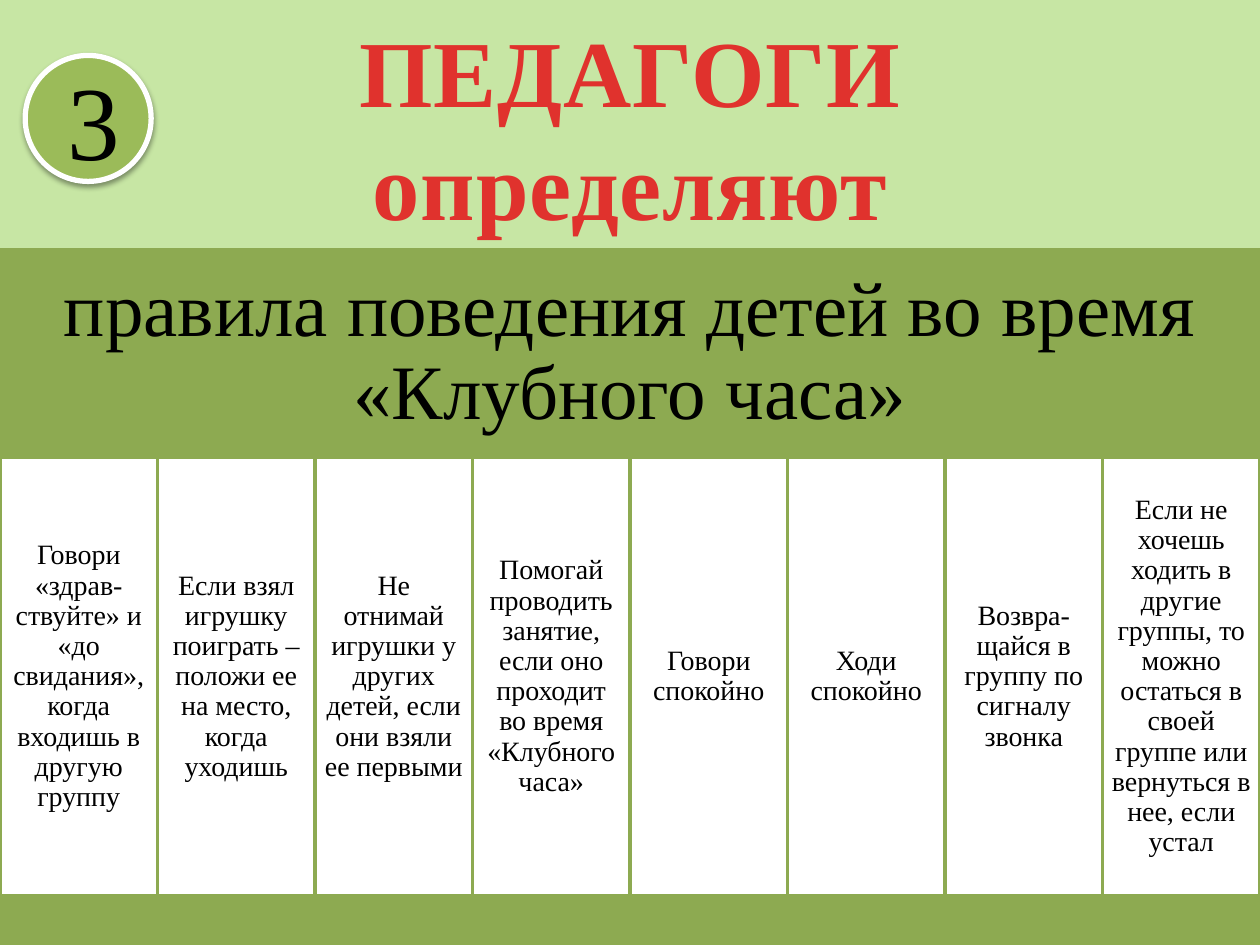
from lxml import etree
from pptx import Presentation, util as u
from pptx.dml.color import RGBColor
from pptx.enum import shapes, text
from pptx.oxml import ns

BACKGROUND = RGBColor(0xC7, 0xE6, 0xA4)
RED = RGBColor(0xE0, 0x32, 0x2D)
OLIVE = RGBColor(0x8D, 0xAA, 0x51)
GREEN = RGBColor(0x9B, 0xBB, 0x59)
WHITE = RGBColor(0xFF, 0xFF, 0xFF)
BLACK = RGBColor(0, 0, 0)

RULES = [
    "Говори «здрав-ствуйте» и «до свидания», когда входишь в другую группу",
    "Если взял игрушку поиграть – положи ее на место, когда уходишь",
    "Не отнимай игрушки у других детей, если они взяли ее первыми",
    "Помогай проводить занятие, если оно проходит во время «Клубного часа»",
    "Говори спокойно",
    "Ходи спокойно",
    "Возвра-щайся в группу по сигналу звонка",
    "Если не хочешь ходить в другие группы, то можно остаться в своей "
    "группе или вернуться в нее, если устал",
]


class Deck:
    font = "Times New Roman"

    def __init__(self, prs):
        self.s = prs.slides.add_slide(prs.slide_layouts[5])
        fill = self.s.background.fill
        fill.solid()
        fill.fore_color.rgb = BACKGROUND

    def format(self, p, size, color, align=text.PP_ALIGN.CENTER):
        p.alignment = align
        p.font.name = self.font
        p.font.size = u.Pt(size)
        p.font.color.rgb = color

    def title(self, lines, x, y, w, h):
        sp = self.s.shapes.title
        sp.left, sp.top, sp.width, sp.height = map(u.Inches, (x, y, w, h))
        tf = sp.text_frame
        tf.text = "\n".join(lines)
        tf.auto_size = text.MSO_AUTO_SIZE.NONE
        tf.word_wrap = False
        tf.vertical_anchor = text.MSO_ANCHOR.TOP
        for p in tf.paragraphs:
            self.format(p, 54, RED)
            p.font.bold = True
            for r in p.runs:
                r.font._element.set("spc", "50")

    def shape(self, kind, x, y, w, h, fill, line=None, line_width=0):
        sp = self.s.shapes.add_shape(kind, *map(u.Inches, (x, y, w, h)))
        sp.shadow.inherit = False
        sp.fill.solid()
        sp.fill.fore_color.rgb = fill
        if line is None:
            sp.line.fill.background()
        else:
            sp.line.color.rgb = line
            sp.line.width = u.Pt(line_width)
        return sp

    def box(self, x, y, w, h, fill, words="", size=16, inset=0.07, line=None):
        sp = self.shape(shapes.MSO_SHAPE.RECTANGLE, x, y, w, h, fill, line, 2)
        if words:
            tf = sp.text_frame
            tf.text = words
            tf.word_wrap = True
            tf.vertical_anchor = text.MSO_ANCHOR.MIDDLE
            tf.margin_left = tf.margin_right = u.Inches(inset)
            tf.margin_top = tf.margin_bottom = u.Inches(inset)
            p = tf.paragraphs[0]
            self.format(p, size, BLACK)
            p.line_spacing = 0.9

    def badge(self, number, x, y, d):
        sp = self.shape(shapes.MSO_SHAPE.OVAL, x, y, d, d, GREEN, WHITE, 3)
        effects = sp._element.spPr.find(ns.qn("a:effectLst"))
        shadow = etree.SubElement(
            effects, ns.qn("a:outerShdw"), blurRad=str(u.Pt(3.1)),
            dist=str(u.Pt(1.6)), dir="5400000", rotWithShape="0")
        color = etree.SubElement(shadow, ns.qn("a:srgbClr"), val=str(BLACK))
        etree.SubElement(color, ns.qn("a:alpha"), val="38000")
        tf = sp.text_frame
        tf.text = number
        tf.vertical_anchor = text.MSO_ANCHOR.MIDDLE
        self.format(tf.paragraphs[0], 60, BLACK, text.PP_ALIGN.RIGHT)


def main():
    prs = Presentation()
    prs.slide_width, prs.slide_height = u.Inches(10), u.Inches(7.5)
    deck = Deck(prs)
    deck.title(["ПЕДАГОГИ", "определяют"], 0, 0.05, 10, 1)
    deck.badge("3", 0.2, 0.44, 1)
    deck.box(0, 1.97, 10, 1.66, OLIVE,
             "правила поведения детей во время «Клубного часа»", 44, 0.18)
    width = 10 / len(RULES)
    for i, rule in enumerate(RULES):
        deck.box(i * width, 3.63, width, 3.48, WHITE, rule, line=OLIVE)
    deck.box(0, 7.11, 10, 0.39, OLIVE)
    prs.save("out.pptx")


if __name__ == "__main__":
    main()
